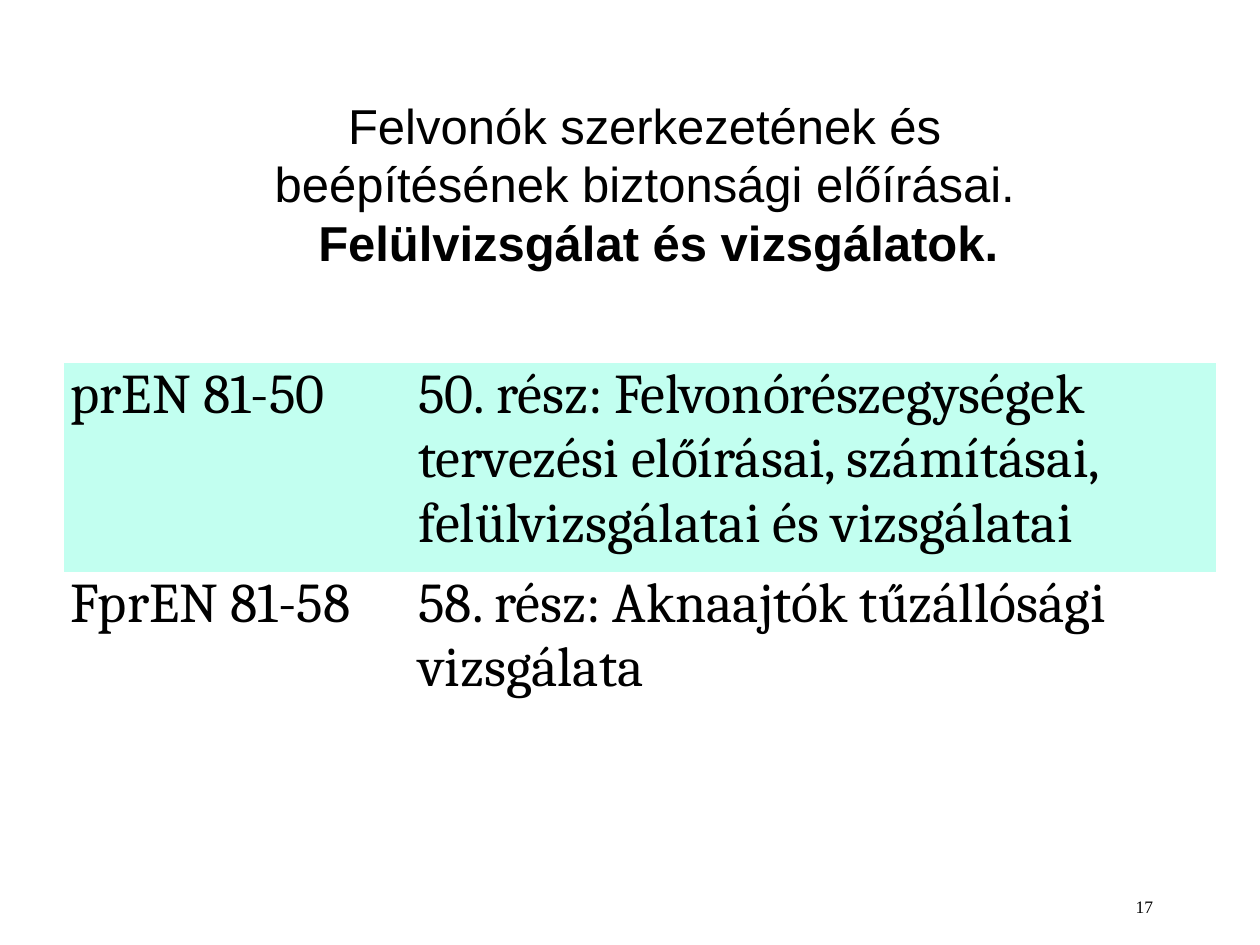
from pptx import Presentation
from pptx.dml.color import RGBColor
from pptx.enum.text import MSO_ANCHOR, PP_ALIGN
from pptx.util import Inches, Pt

BLACK = RGBColor(0x00, 0x00, 0x00)
MINT = RGBColor(0xC2, 0xFF, 0xF0)
CENTER, RIGHT = PP_ALIGN.CENTER, PP_ALIGN.RIGHT
MIDDLE, TOP = MSO_ANCHOR.MIDDLE, MSO_ANCHOR.TOP
PLAIN_TABLE_STYLE = "{2D5ABB26-0587-4C30-8999-92F81FD0307C}"

# Content: title lines as (text, bold); standards as (code, subject, fill)
TITLE_LINES = [
    ("Felvonók szerkezetének és ", False),
    ("beépítésének biztonsági előírásai. ", False),
    (" Felülvizsgálat és vizsgálatok.", True),
]
STANDARDS = [
    ("prEN 81-50", "50. rész: Felvonórészegységek tervezési előírásai, "
     "számításai, felülvizsgálatai és vizsgálatai", MINT),
    ("FprEN 81-58", "58. rész: Aknaajtók tűzállósági vizsgálata", None),
]
PAGE_NUMBER = "17"

# Layout in inches
TITLE_BOX = (0.92, 0.83, 8.5, 1.25)
PAGE_BOX = (7.17, 7.06, 2.08, 0.28)
TABLE_LEFT, TABLE_TOP = 0.51, 2.88
COLUMN_WIDTHS = (2.76, 6.38)
ROW_HEIGHTS = (1.66, 1.33)


def style(paragraph, font_name, size):
    paragraph.font.name = font_name
    paragraph.font.size = Pt(size)
    paragraph.font.color.rgb = BLACK


def add_text(slide, box, lines, font_name, size, align, anchor):
    frame = slide.shapes.add_textbox(*map(Inches, box)).text_frame
    frame.word_wrap = True
    frame.vertical_anchor = anchor
    paragraph = frame.paragraphs[0]
    paragraph.alignment = align
    style(paragraph, font_name, size)
    for i, (text, bold) in enumerate(lines):
        if i:
            paragraph.add_line_break()
        run = paragraph.add_run()
        run.text = text
        run.font.bold = bold


def add_standards(slide):
    frame = slide.shapes.add_table(
        len(STANDARDS), len(COLUMN_WIDTHS), Inches(TABLE_LEFT), Inches(TABLE_TOP),
        Inches(sum(COLUMN_WIDTHS)), Inches(sum(ROW_HEIGHTS)))
    table = frame.table
    table.first_row = table.horz_banding = False
    # Table style without grid lines
    table._tbl.tblPr[0].text = PLAIN_TABLE_STYLE
    for column, width in zip(table.columns, COLUMN_WIDTHS):
        column.width = Inches(width)
    for row, height, (*texts, fill) in zip(table.rows, ROW_HEIGHTS, STANDARDS):
        row.height = Inches(height)
        for cell, text in zip(row.cells, texts):
            cell.margin_left = cell.margin_right = Inches(0.05)
            cell.margin_top = cell.margin_bottom = 0
            if fill is None:
                cell.fill.background()
            else:
                cell.fill.solid()
                cell.fill.fore_color.rgb = fill
            cell.text = text
            paragraph = cell.text_frame.paragraphs[0]
            paragraph.space_after = Pt(6)
            style(paragraph, "Cambria", 32)


def main():
    deck = Presentation()
    deck.slide_width, deck.slide_height = Inches(10), Inches(7.5)
    slide = deck.slides.add_slide(deck.slide_layouts[6])
    add_text(slide, PAGE_BOX, [(PAGE_NUMBER, False)], "Times New Roman", 10, RIGHT, TOP)
    add_text(slide, TITLE_BOX, TITLE_LINES, "Arial", 28, CENTER, MIDDLE)
    add_standards(slide)
    deck.save("out.pptx")


if __name__ == "__main__":
    main()
